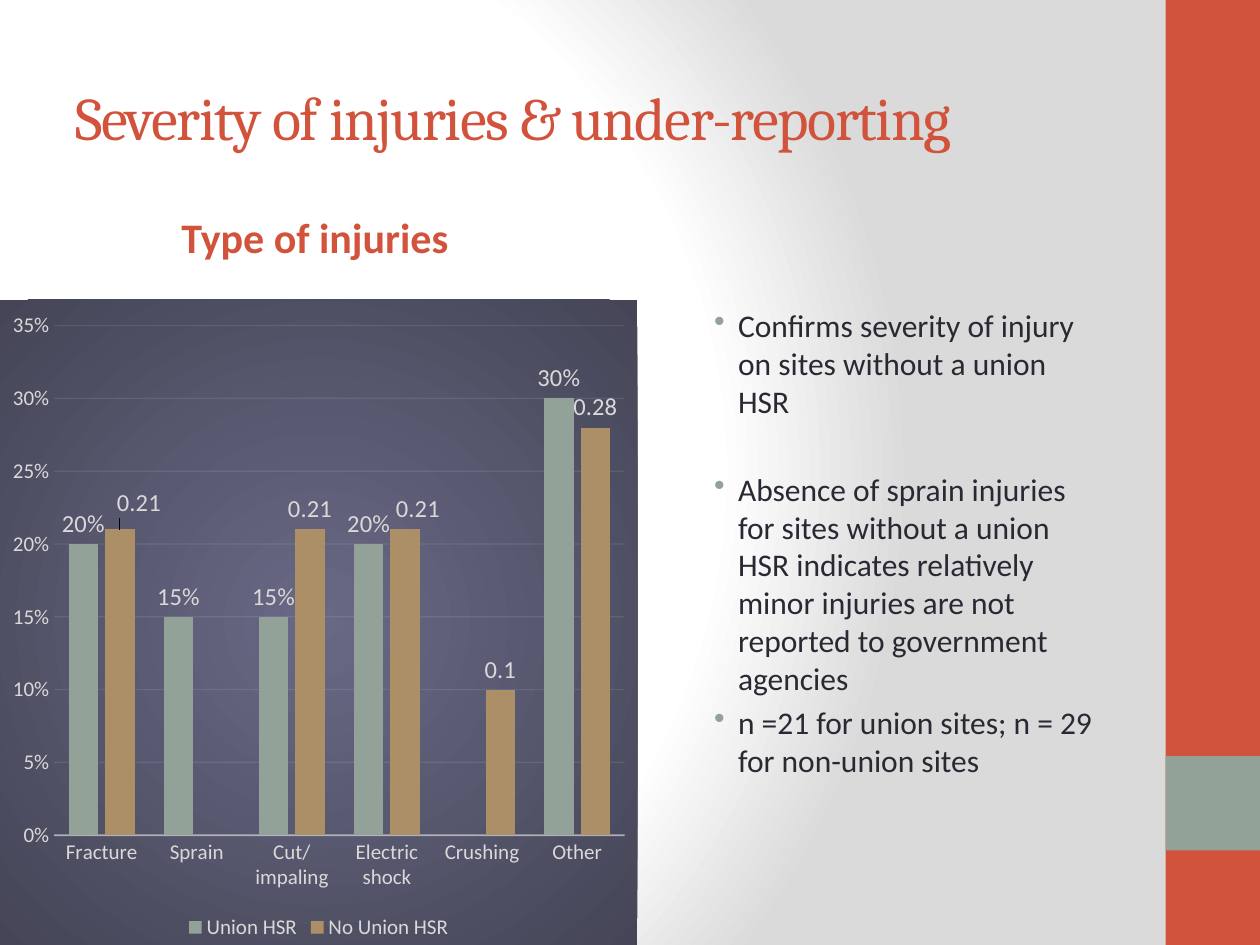
from typing import NamedTuple

from lxml import etree
from pptx import Presentation
from pptx.chart.data import CategoryChartData
from pptx.dml.color import RGBColor
from pptx.enum.chart import XL_CHART_TYPE, XL_LABEL_POSITION, XL_LEGEND_POSITION, XL_TICK_MARK
from pptx.enum.shapes import MSO_SHAPE
from pptx.enum.text import MSO_ANCHOR, PP_ALIGN
from pptx.oxml.ns import qn
from pptx.util import Inches, Pt

COLUMN = XL_CHART_TYPE.COLUMN_CLUSTERED
OUTSIDE_END = XL_LABEL_POSITION.OUTSIDE_END
LEGEND_BOTTOM = XL_LEGEND_POSITION.BOTTOM
NO_TICK = XL_TICK_MARK.NONE
RECT = MSO_SHAPE.RECTANGLE
TOP, MIDDLE, BOTTOM = MSO_ANCHOR.TOP, MSO_ANCHOR.MIDDLE, MSO_ANCHOR.BOTTOM
LEFT, CENTER = PP_ALIGN.LEFT, PP_ALIGN.CENTER

HEAD, BODY = "Cambria", "Calibri"
COLORS = {
    "red": "D2533C", "sage": "93A299", "tan": "AD8F67", "ink": "292934",
    "label": "D9D9D9", "grid": "F2F2F2", "white": "FFFFFF", "grey": "DADADA",
    "panel_mid": "696986", "panel_edge": "454557",
}


class Band(NamedTuple):
    top: float
    height: float
    color: str


class Series(NamedTuple):
    name: str
    values: tuple
    color: str
    fmt: str
    nudges: dict  # point index -> label shift as a fraction of the chart


class Bullet(NamedTuple):
    text: str
    before: float


BANDS = [Band(0, 7.5, "red"), Band(6, 0.75, "sage")]
CATEGORIES = ["Fracture", "Sprain", "Cut/impaling", "Electric shock", "Crushing", "Other"]
SERIES = [
    Series("Union HSR", (0.2, 0.15, 0.15, 0.2, None, 0.3), "sage", "0%", {}),
    Series("No Union HSR", (0.21, None, 0.21, 0.21, 0.1, 0.28), "tan", "General",
           {0: (0.03, -0.01), 3: (0.02, 0)}),
]
BULLETS = [
    Bullet("Confirms severity of injury on sites without a union HSR", 3.6),
    Bullet("Absence of sprain injuries for sites without a union HSR indicates "
           "relatively minor injuries are not reported to government agencies", 28.8),
    Bullet("n =21 for union sites; n = 29 for non-union sites", 3.6),
]


def rgb(name: str) -> RGBColor:
    return RGBColor.from_string(COLORS[name])


def sub(parent, tag: str, **attrs):
    return etree.SubElement(parent, qn(tag), {k: str(v) for k, v in attrs.items()})


def radial_fill(parent, stops: list, focus: tuple):
    """Put a circular gradient first in a properties element."""
    grad = etree.Element(qn("a:gradFill"), rotWithShape="1")
    gs_list = sub(grad, "a:gsLst")
    for pos, color in stops:
        sub(sub(gs_list, "a:gs", pos=pos * 1000), "a:srgbClr", val=COLORS[color])
    sides = {side: value * 1000 for side, value in zip("ltrb", focus)}
    sub(sub(grad, "a:path", path="circle"), "a:fillToRect", **sides)
    parent.insert(0, grad)


def set_font(font, size: float, color: str, name: str = BODY, bold: bool = False):
    font.size, font.name, font.bold = Pt(size), name, bold
    font.color.rgb = rgb(color)


def add_line(line, color: str, width: float, opacity: int):
    line.width = Pt(width)
    line.color.rgb = rgb(color)
    sub(line._ln.find(".//" + qn("a:srgbClr")), "a:alpha", val=opacity * 1000)


def add_text(s, box: tuple, items: list, *, size: float, color: str, font: str = BODY,
             bold: bool = False, align=LEFT, anchor=TOP, spacing: int = 0, bullets: bool = False):
    tf = s.shapes.add_textbox(*map(Inches, box)).text_frame
    tf.word_wrap, tf.vertical_anchor = True, anchor
    for i, item in enumerate(items):
        p = tf.paragraphs[0] if i == 0 else tf.add_paragraph()
        p.alignment, p.space_before = align, Pt(item.before)
        r = p.add_run()
        r.text = item.text
        set_font(r.font, size, color, font, bold)
        if spacing:
            r.font._element.set("spc", str(spacing))
        if bullets:
            pPr = p._p.get_or_add_pPr()
            pPr.set("marL", str(Inches(0.28)))
            pPr.set("indent", str(Inches(-0.19)))
            sub(sub(pPr, "a:buClr"), "a:srgbClr", val=COLORS["sage"])
            sub(pPr, "a:buChar", char="•")


def add_band(s, band: Band):
    sp = s.shapes.add_shape(RECT, Inches(9.25), Inches(band.top), Inches(0.75), Inches(band.height))
    sp.shadow.inherit = False
    sp.fill.solid()
    sp.fill.fore_color.rgb = rgb(band.color)
    sp.line.fill.background()


def manual_layout(**values):
    layout = etree.Element(qn("c:layout"))
    manual = sub(layout, "c:manualLayout")
    for tag, value in values.items():
        sub(manual, "c:" + tag, val=value)
    return layout


def style_series(ser, spec: Series):
    ser.format.fill.solid()
    ser.format.fill.fore_color.rgb = rgb(spec.color)
    ser.invert_if_negative = False
    labels = ser.data_labels
    labels.show_value, labels.position = True, OUTSIDE_END
    labels.number_format, labels.number_format_is_linked = spec.fmt, False
    set_font(labels.font, 14, "label")
    for idx, (dx, dy) in spec.nudges.items():
        label = ser.points[idx].data_label
        set_font(label.font, 14, "label")
        label.position = OUTSIDE_END
    for tag in ser._element.iter(qn("c:dLbl")):
        idx = tag.find(qn("c:idx"))
        dx, dy = spec.nudges[int(idx.get("val"))]
        idx.addnext(manual_layout(x=dx, y=dy))


def add_injury_chart(s):
    data = CategoryChartData(number_format="0%")
    data.categories = CATEGORIES
    for spec in SERIES:
        data.add_series(spec.name, spec.values)
    box = map(Inches, (0, 2.38, 5.06, 5.12))
    chart = s.shapes.add_chart(COLUMN, *box, data).chart
    set_font(chart.font, 10, "ink")
    chart.has_title = False
    chart.has_legend = True
    chart.legend.position, chart.legend.include_in_layout = LEGEND_BOTTOM, False
    set_font(chart.legend.font, 12, "label")

    # Axes
    cat, val = chart.category_axis, chart.value_axis
    for axis in (cat, val):
        axis.major_tick_mark = axis.minor_tick_mark = NO_TICK
        set_font(axis.tick_labels.font, 12, "label")
    add_line(cat.format.line, "grid", 1, 54)
    val.format.line.fill.background()
    add_line(val.major_gridlines.format.line, "grid", 0.75, 10)
    val.minimum_scale, val.maximum_scale, val.major_unit = 0, 0.35, 0.05
    val.tick_labels.number_format, val.tick_labels.number_format_is_linked = "0%", False

    # Columns
    plot = chart.plots[0]
    plot.gap_width, plot.overlap, plot.vary_by_categories = 100, -24, False
    for ser, spec in zip(plot.series, SERIES):
        style_series(ser, spec)

    # Plot position and panel fill
    area = chart._chartSpace.find(".//" + qn("c:plotArea"))
    for old in area.findall(qn("c:layout")):
        area.remove(old)
    area.insert(0, manual_layout(layoutTarget="inner", xMode="edge", yMode="edge",
                                 x="0.085", y="0.04", w="0.895", h="0.79"))
    panel = etree.Element(qn("c:spPr"))
    radial_fill(panel, [(0, "panel_mid"), (100, "panel_edge")], (50, 50, 50, 50))
    sub(sub(panel, "a:ln"), "a:noFill")
    chart._chartSpace.find(qn("c:chart")).addnext(panel)


def main():
    prs = Presentation()
    prs.slide_width, prs.slide_height = Inches(10), Inches(7.5)
    s = prs.slides.add_slide(prs.slide_layouts[6])

    # Background
    s.background.fill.solid()
    bg = s._element.find(".//" + qn("p:bgPr"))
    bg.remove(bg.find(qn("a:solidFill")))
    radial_fill(bg, [(0, "white"), (75, "white"), (100, "grey")], (20, 50, 100, 50))

    # Side bands
    for band in BANDS:
        add_band(s, band)

    # Headings, chart and findings
    add_text(s, (0.5, 0.3, 8.33, 1.25), [Bullet("Severity of injuries & under-reporting", 0)],
             size=34.5, color="red", font=HEAD, anchor=MIDDLE, spacing=-80)
    add_text(s, (0.5, 1.68, 4, 0.45), [Bullet("Type of injuries", 4.8)],
             size=24, color="red", bold=True, align=CENTER, anchor=BOTTOM)
    add_injury_chart(s)
    add_text(s, (5.48, 2.38, 3.36, 4.32), BULLETS, size=18, color="ink", bullets=True)

    prs.save("out.pptx")


if __name__ == "__main__":
    main()
